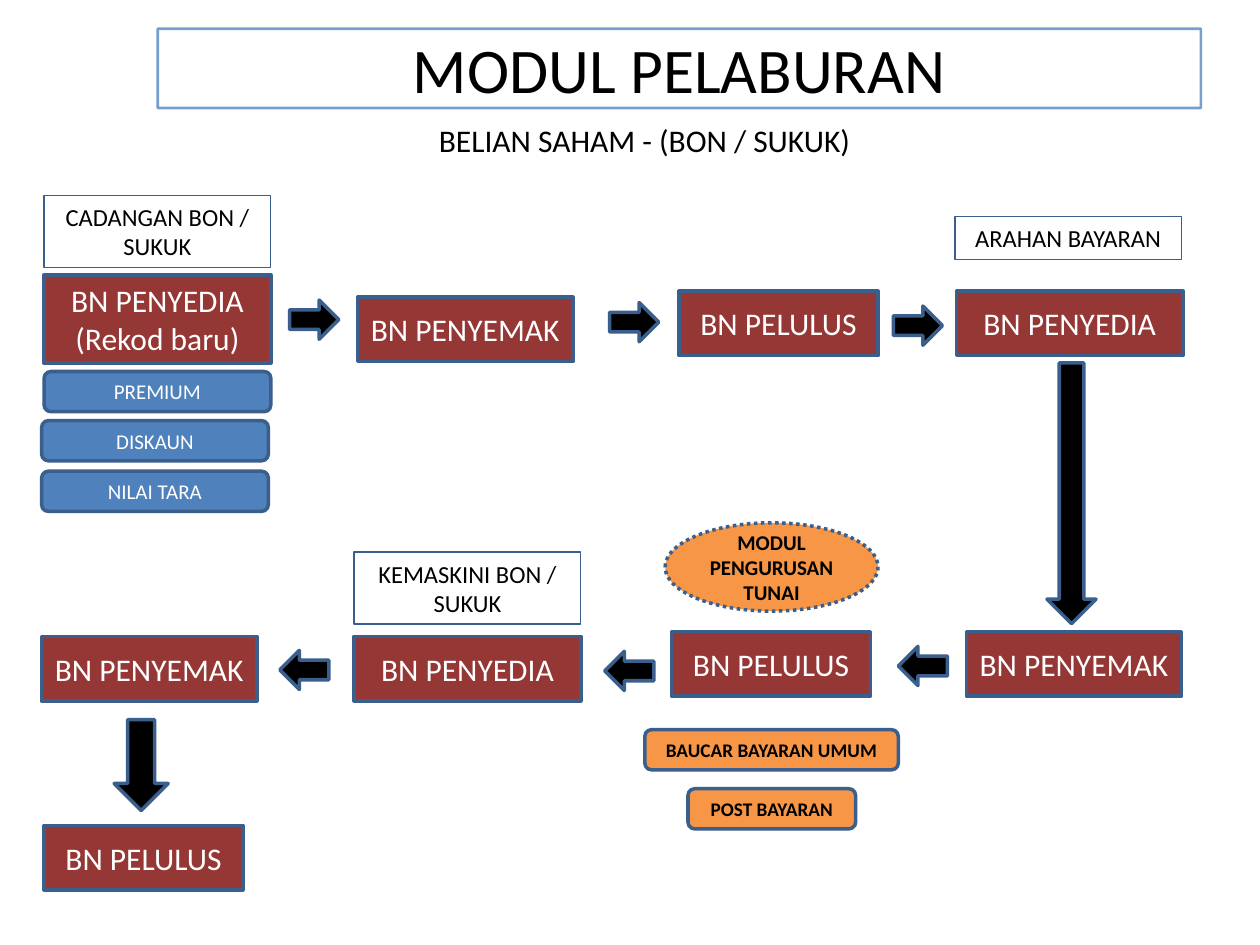
from lxml.etree import SubElement
from pptx import Presentation
from pptx.dml.color import RGBColor
from pptx.enum.dml import MSO_LINE
from pptx.enum.shapes import MSO_SHAPE
from pptx.enum.text import MSO_ANCHOR, PP_ALIGN
from pptx.oxml.ns import qn
from pptx.util import Cm, Pt

BLACK, WHITE = "000000", "FFFFFF"
MAROON, BLUE, ORANGE, OUTLINE = "953735", "4F81BD", "F79646", "3A5F8C"

STEP_WIDTHS = {"BN PENYEDIA": 4.57, "BN PENYEMAK": 4.34, "BN PELULUS": 4.01}
STEP_HEIGHT = 1.3
COLUMN_WIDTH = 4.57
TAG_HEIGHT = 0.81

STEPS = [
    ("BN PENYEMAK", 7.21, 5.99),
    ("BN PELULUS", 13.69, 5.87),
    ("BN PENYEDIA", 19.28, 5.87),
    ("BN PENYEMAK", 19.48, 12.73),
    ("BN PELULUS", 13.54, 12.73),
    ("BN PENYEDIA", 7.14, 12.83),
    ("BN PENYEMAK", 0.84, 12.83),
    ("BN PELULUS", 0.89, 16.64),
]
CAPTIONS = [
    ("CADANGAN BON / SUKUK", 0.89, 3.94, 1.45),
    ("ARAHAN BAYARAN", 19.25, 4.37, 0.86),
    ("KEMASKINI BON / SUKUK", 7.14, 11.13, 1.45),
]
VALUE_TAGS = [("PREMIUM", 0.89, 7.49), ("DISKAUN", 0.84, 8.48), ("NILAI TARA", 0.84, 9.5)]
PAYMENT_TAGS = [("BAUCAR BAYARAN UMUM", 13.0, 14.71, 5.11), ("POST BAYARAN", 13.87, 15.9, 3.38)]
SHORT_ARROWS = [
    (5.84, 6.05, 0), (12.29, 6.1, 0), (18.01, 6.17, 0),
    (18.11, 13.03, 180), (12.19, 13.13, 180), (5.64, 13.11, 180),
]
DOWN_ARROWS = [(18.97, 9.45, 5.26, 0.99), (1.93, 14.88, 1.83, 1.09)]


def color(value):
    return RGBColor.from_string(value)


def write_text(shape, lines, size, text_color, bold=False):
    frame = shape.text_frame
    margins = {f"margin_{side}": Cm(0.1) for side in ("left", "right", "top", "bottom")}
    settings = {"word_wrap": True, "vertical_anchor": MSO_ANCHOR.MIDDLE, **margins}
    for name, value in settings.items():
        setattr(frame, name, value)
    for index, line in enumerate(lines):
        paragraph = frame.paragraphs[0] if index == 0 else frame.add_paragraph()
        paragraph.alignment = PP_ALIGN.CENTER
        run = paragraph.add_run()
        run.text = line
        for name, value in {"name": "Calibri", "size": Pt(size), "bold": bold}.items():
            setattr(run.font, name, value)
        run.font.color.rgb = color(text_color)


def add_box(slide, kind, box, fill=None, line=OUTLINE, line_width=2):
    shape = slide.shapes.add_shape(kind, *map(Cm, box))
    shape.shadow.inherit = False
    if fill:
        shape.fill.solid()
        shape.fill.fore_color.rgb = color(fill)
    else:
        shape.fill.background()
    shape.line.color.rgb = color(line)
    shape.line.width = Pt(line_width)
    return shape


def add_title(slide):
    title = add_box(slide, MSO_SHAPE.RECTANGLE, (3.18, 0.58, 21.03, 1.6), None, BLUE, 1.5)
    line_color = title.line._get_or_add_ln().find(".//" + qn("a:srgbClr"))
    SubElement(line_color, qn("a:alpha"), val="76000")
    write_text(title, ["MODUL PELABURAN"], 36.3, BLACK)
    subtitle = slide.shapes.add_textbox(*map(Cm, (6.15, 2.31, 13.69, 1.02)))
    write_text(subtitle, ["BELIAN SAHAM - (BON / SUKUK)"], 18, BLACK)


def add_step(slide, lines, left, top, height=STEP_HEIGHT):
    box = (left, top, STEP_WIDTHS[lines[0]], height)
    write_text(add_box(slide, MSO_SHAPE.RECTANGLE, box, MAROON), lines, 18, WHITE)


def add_caption(slide, text, left, top, height):
    box = (left, top, COLUMN_WIDTH, height)
    caption = add_box(slide, MSO_SHAPE.RECTANGLE, box, line_width=0.75)
    write_text(caption, [text], 14, BLACK)


def add_value_tag(slide, text, left, top):
    box = (left, top, COLUMN_WIDTH, TAG_HEIGHT)
    tag = add_box(slide, MSO_SHAPE.FLOWCHART_ALTERNATE_PROCESS, box, BLUE)
    write_text(tag, [text], 12, WHITE)


def add_payment_tag(slide, text, left, top, width):
    box = (left, top, width, TAG_HEIGHT)
    tag = add_box(slide, MSO_SHAPE.ROUNDED_RECTANGLE, box, ORANGE)
    write_text(tag, [text], 11, BLACK, bold=True)


def add_cash_module(slide):
    ellipse = add_box(slide, MSO_SHAPE.OVAL, (13.41, 10.54, 4.29, 1.78), ORANGE)
    ellipse.line.dash_style = MSO_LINE.ROUND_DOT
    write_text(ellipse, ["MODUL PENGURUSAN TUNAI"], 12, BLACK, bold=True)


def add_arrow(slide, left, top, rotation, length=0.99, thickness=0.79):
    arrow = add_box(slide, MSO_SHAPE.RIGHT_ARROW, (left, top, length, thickness), BLACK)
    arrow.rotation = rotation


def main():
    presentation = Presentation()
    presentation.slide_width, presentation.slide_height = Cm(25.4), Cm(19.05)
    slide = presentation.slides.add_slide(presentation.slide_layouts[6])
    add_title(slide)
    add_step(slide, ["BN PENYEDIA", "(Rekod baru)"], 0.89, 5.54, 1.78)
    for text, left, top in STEPS:
        add_step(slide, [text], left, top)
    for caption in CAPTIONS:
        add_caption(slide, *caption)
    for tag in VALUE_TAGS:
        add_value_tag(slide, *tag)
    for tag in PAYMENT_TAGS:
        add_payment_tag(slide, *tag)
    add_cash_module(slide)
    for arrow in SHORT_ARROWS:
        add_arrow(slide, *arrow)
    for left, top, length, thickness in DOWN_ARROWS:
        add_arrow(slide, left, top, 90, length, thickness)
    presentation.save("out.pptx")


if __name__ == "__main__":
    main()
